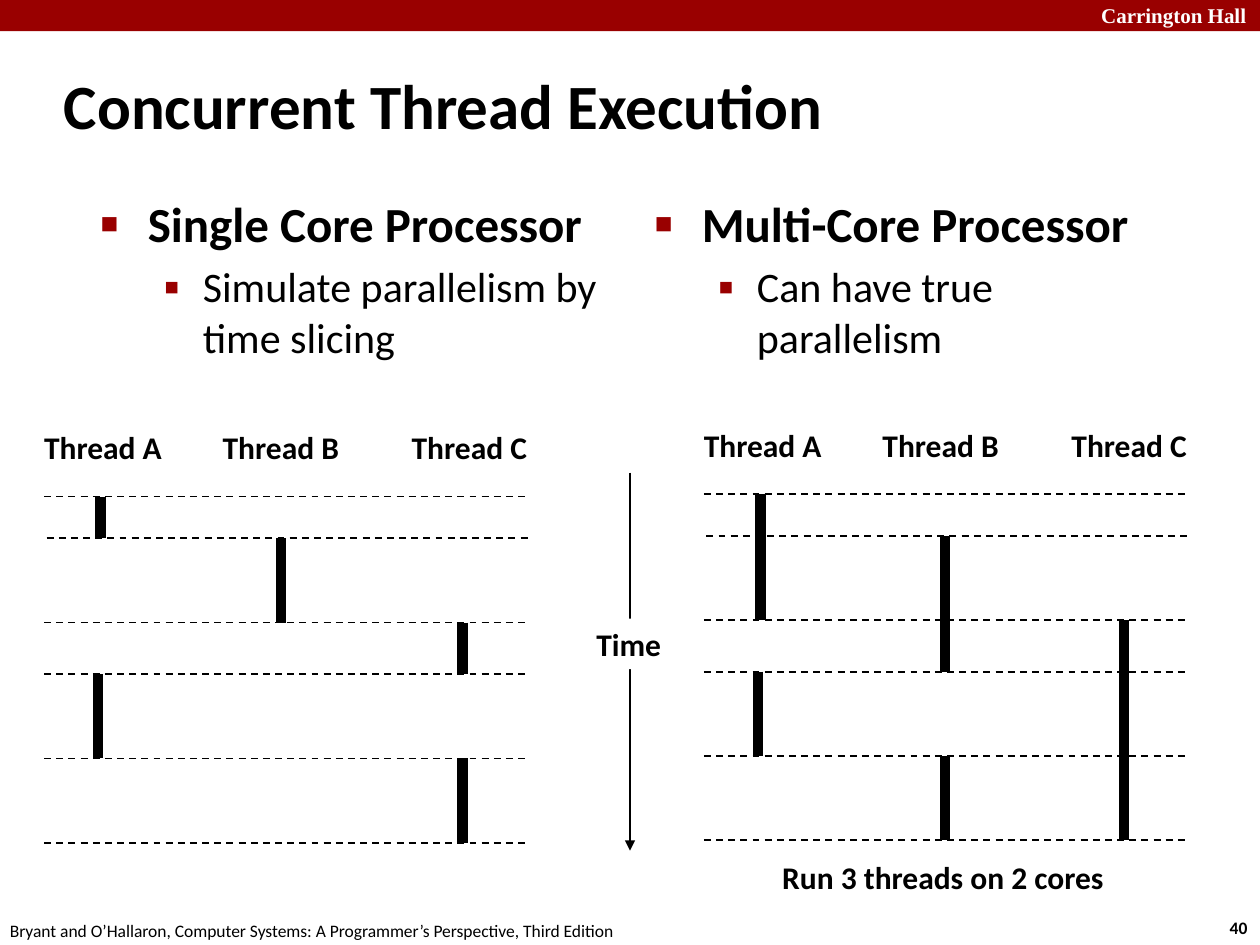
from lxml import etree
from pptx import Presentation
from pptx.dml.color import RGBColor
from pptx.enum.dml import MSO_LINE
from pptx.enum.shapes import MSO_CONNECTOR, MSO_SHAPE
from pptx.enum.text import MSO_ANCHOR, PP_ALIGN
from pptx.oxml.ns import qn
from pptx.util import Cm, Pt

RED = RGBColor(0x99, 0x00, 0x00)
BLACK = RGBColor(0x00, 0x00, 0x00)
WHITE = RGBColor(0xFF, 0xFF, 0xFF)
DASH = MSO_LINE.DASH
STRAIGHT = MSO_CONNECTOR.STRAIGHT
RECT = MSO_SHAPE.RECTANGLE
MIDDLE = MSO_ANCHOR.MIDDLE
CENTER = PP_ALIGN.CENTER

# Text formats
BASE = {"name": "Calibri", "size": Pt(18), "bold": True}
NOTE = BASE | {"size": Pt(10), "bold": False}
PAGE = BASE | {"size": Pt(10)}
BRAND = {"name": "Times New Roman", "size": Pt(12), "bold": True}
TITLE = BASE | {"size": Pt(36)}
HEAD = BASE | {"size": Pt(28)}
SUB = BASE | {"size": Pt(24), "bold": False}

deck = Presentation()
deck.slide_width, deck.slide_height = Cm(25.4), Cm(19.05)
slide = deck.slides.add_slide(deck.slide_layouts[6])
shapes = slide.shapes


def add_text(area, rows, color=BLACK, wrap=False):
    """Add a text box with one paragraph per (words, format) row."""
    box = shapes.add_textbox(*[Cm(v) for v in area])
    frame = box.text_frame
    frame.word_wrap = wrap
    for i, (words, form) in enumerate(rows):
        para = frame.add_paragraph() if i else frame.paragraphs[0]
        run = para.add_run()
        run.text = words
        run.font.color.rgb = color
        for key, value in form.items():
            setattr(run.font, key, value)
    return box


def add_line(x1, y1, x2, y2, width, dash=None):
    """Add a plain black line without shadow."""
    line = shapes.add_connector(STRAIGHT, Cm(x1), Cm(y1), Cm(x2), Cm(y2))
    line.line.color.rgb = BLACK
    line.line.width = Pt(width)
    if dash:
        line.line.dash_style = dash
    etree.SubElement(line._element.spPr, qn("a:effectLst"))
    return line


# Top band and footer
band = shapes.add_shape(RECT, 0, 0, deck.slide_width, Cm(0.63))
band.shadow.inherit = False
band.fill.solid()
band.fill.fore_color.rgb = RED
band.line.fill.background()
add_text((21.95, -0.08, 3.63, 0.76), [("Carrington Hall", BRAND)], WHITE, True)
add_text((24.54, 18.36, 0.94, 0.69), [("40", PAGE)])
add_text((-0.05, 18.42, 12.9, 0.69), [(
    "Bryant and O’Hallaron, Computer Systems: "
    "A Programmer’s Perspective, Third Edition", NOTE)])

# Title
title = add_text((1.04, 1.04, 21.08, 2.11),
                 [("Concurrent Thread Execution", TITLE)], wrap=True)
title.text_frame.vertical_anchor = MIDDLE

# Bulleted columns: left margin, indent, space before, bullet size and sign
LEVELS = [(0.95, -0.95, 5.6, 60, "■"), (2.06, -0.79, 4.8, 110, "▪")]
COLUMNS = [
    (1.78, "Single Core Processor", "Simulate parallelism by time slicing"),
    (12.95, "Multi-Core Processor", "Can have true parallelism"),
]
for x, head, sub in COLUMNS:
    body = add_text((x, 3.78, 10.74, 13.82), [(head, HEAD), (sub, SUB)], wrap=True)
    for para, level in zip(body.text_frame.paragraphs, LEVELS):
        left, indent, space, size, sign = level
        para.space_before = Pt(space)
        props = para._p.get_or_add_pPr()
        props.set("marL", str(Cm(left)))
        props.set("indent", str(Cm(indent)))
        tint = etree.SubElement(props, qn("a:buClr"))
        etree.SubElement(tint, qn("a:srgbClr"), val=str(RED))
        etree.SubElement(props, qn("a:buSzPct"), val=str(size * 1000))
        etree.SubElement(props, qn("a:buFont"), typeface="Arial")
        etree.SubElement(props, qn("a:buChar"), char=sign)

# Time axis
axis = add_line(12.7, 9.53, 12.7, 17.15, 1)
etree.SubElement(axis.line._get_or_add_ln(), qn("a:tailEnd"), type="triangle")
time = add_text((11.76, 12.47, 1.83, 1.02), [("Time", BASE)])
time.fill.solid()
time.fill.fore_color.rgb = WHITE
time.text_frame.paragraphs[0].alignment = CENTER

# Thread charts: each bar is (x, first row, last row)
ROWS = [10.01, 10.85, 12.55, 13.59, 15.29, 16.99]
LABELS = [(0.64, 2.95, "A"), (4.24, 2.9, "B"), (8.05, 2.87, "C")]
SINGLE = [(2.03, 0, 1), (5.66, 1, 2), (9.32, 2, 3), (1.98, 3, 4), (9.32, 4, 5)]
MULTI = [(2.03, 0, 2), (5.75, 1, 3), (9.36, 2, 5), (1.98, 3, 4), (5.75, 4, 5)]
for dx, dy, bars in [(0, 0, SINGLE), (13.3, -0.05, MULTI)]:
    for x, width, name in LABELS:
        add_text((x + dx, 8.51 + dy, width, 1.02), [(f"Thread {name}", BASE)])
    for x, start, end in bars:
        add_line(x + dx, ROWS[start] + dy, x + dx, ROWS[end] + dy, 6)
    for i, y in enumerate(ROWS):
        left = dx + (0.94 if i == 1 else 0.89)
        add_line(left, y + dy, left + 9.7, y + dy, 1, DASH)

# Caption
add_text((15.52, 17.17, 7.06, 1.02), [("Run 3 threads on 2 cores", BASE)])

deck.save("out.pptx")
